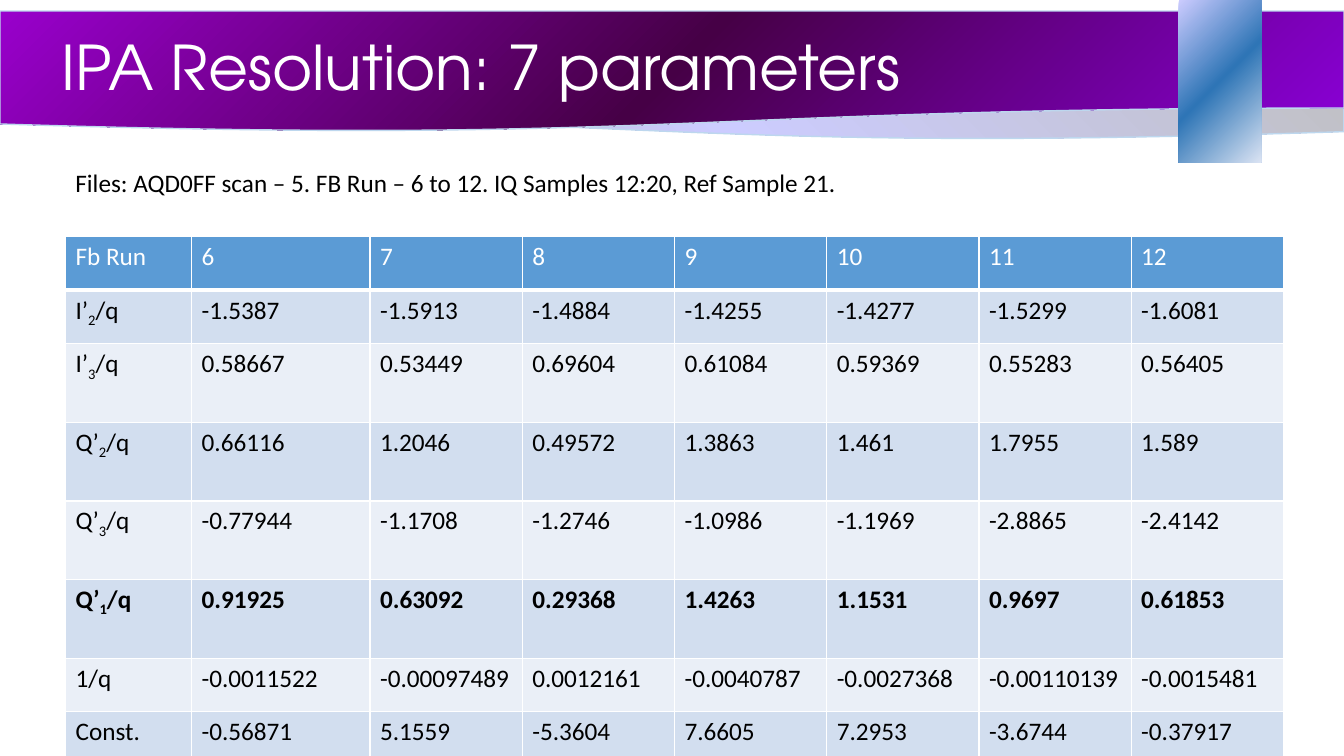
from dataclasses import dataclass

from lxml.etree import SubElement as Sub
from pptx import Presentation
from pptx.dml.color import RGBColor as RGB
from pptx.enum.shapes import MSO_SHAPE as Kind
from pptx.enum.text import MSO_ANCHOR as Anchor, MSO_AUTO_SIZE as Fit, PP_ALIGN as Align
from pptx.oxml.ns import qn
from pptx.shapes.autoshape import Shape
from pptx.slide import Slide
from pptx.table import _Cell as Cell
from pptx.text.text import _Paragraph as Para
from pptx.util import Inches, Pt


@dataclass(frozen=True)
class Theme:
    white: str = "FFFFFF"
    ink: str = "000000"
    edge: str = "BDD7EE"
    head: str = "5B9BD5"
    odd: str = "D2DEEF"
    even: str = "EAEFF7"
    face: str = "TeX Gyre Adventor"
    text: str = "Calibri"
    big: int = 44
    base: int = 18


@dataclass(frozen=True)
class Band:
    kind: Kind
    box: tuple[float, float, float, float]
    stops: tuple[str, str, str]
    flip: bool = False
    line: bool = True
    radial: bool = False


@dataclass(frozen=True)
class Row:
    label: str
    vals: str
    high: float = 0.53
    sub: str = ""
    tail: str = ""
    bold: bool = False


THEME = Theme()
BANDS = [
    Band(Kind.FLOWCHART_DOCUMENT, (0, 0.13, 13.33, 1.26), ("A6A6A6", "CCCCFF", "BFBFBF"), flip=True),
    Band(Kind.FLOWCHART_DOCUMENT, (0, 0.11, 13.33, 1.2), ("8A00D6", "460046", "9900CC")),
    Band(Kind.RECTANGLE, (11.69, 0, 0.82, 1.61), ("DAE3F3", "2E75B6", "CCCCFF"), line=False, radial=True),
]
TALL = 0.78
ROWS = [
    Row("Fb Run", "6 7 8 9 10 11 12"),
    Row("I’", "-1.5387 -1.5913 -1.4884 -1.4255 -1.4277 -1.5299 -1.6081", sub="2", tail="/q"),
    Row("I’", "0.58667 0.53449 0.69604 0.61084 0.59369 0.55283 0.56405", TALL, "3", "/q"),
    Row("Q’", "0.66116 1.2046 0.49572 1.3863 1.461 1.7955 1.589", TALL, "2", "/q"),
    Row("Q’", "-0.77944 -1.1708 -1.2746 -1.0986 -1.1969 -2.8865 -2.4142", TALL, "3", "/q"),
    Row("Q’", "0.91925 0.63092 0.29368 1.4263 1.1531 0.9697 0.61853", TALL, "1", "/q", True),
    Row("1/q", "-0.0011522 -0.00097489 0.0012161 -0.0040787 -0.0027368 -0.00110139 -0.0015481"),
    Row("Const.", "-0.56871 5.1559 -5.3604 7.6605 7.2953 -3.6744 -0.37917"),
]
COLS = [1.25, 1.77] + [1.51] * 6


def add_run(para: Para, text: str, color: str, size: int = THEME.base,
            face: str = THEME.text, bold: bool = False, low: bool = False) -> None:
    run = para.add_run()
    run.text = text
    font = run.font
    font.name, font.size, font.bold = face, Pt(size), bold
    font.color.rgb = RGB.from_string(color)
    if low:
        font._element.set("baseline", "-25000")


def blend(shape: Shape, band: Band) -> None:
    """Fill a shape with three evenly spaced colour stops."""
    shape.fill.gradient()
    grad = shape._element.spPr.find(qn("a:gradFill"))
    for part in list(grad):
        grad.remove(part)
    grad.set("rotWithShape", "1")
    stops = Sub(grad, qn("a:gsLst"))
    for i, color in enumerate(band.stops):
        stop = Sub(stops, qn("a:gs"), pos=str(i * 50000))
        Sub(stop, qn("a:srgbClr"), val=color)
    if band.radial:
        way = Sub(grad, qn("a:path"), {"path": "circle"})
        Sub(way, qn("a:fillToRect"), l="100000", t="100000")
        Sub(grad, qn("a:tileRect"), r="-100000", b="-100000")
    else:
        Sub(grad, qn("a:lin"), ang=str(225 * 60000), scaled="0")


def add_band(slide: Slide, band: Band) -> None:
    shape = slide.shapes.add_shape(band.kind, *map(Inches, band.box))
    shape.shadow.inherit = False
    blend(shape, band)
    if band.line:
        shape.line.color.rgb = RGB.from_string(THEME.edge)
        shape.line.width = Pt(1)
    else:
        shape.line.fill.background()
    if band.flip:
        shape._element.spPr.xfrm.set("flipH", "1")


def style(cell: Cell, fill: str, head: bool) -> None:
    """Draw the cell borders, then its fill."""
    props = cell._tc.get_or_add_tcPr()
    for side in "LRTB" if head else "LRB":
        width = 3 if head and side == "B" else 1
        line = Sub(props, qn(f"a:ln{side}"), w=str(Pt(width)))
        Sub(Sub(line, qn("a:solidFill")), qn("a:srgbClr"), val=THEME.white)
    cell.fill.solid()
    cell.fill.fore_color.rgb = RGB.from_string(fill)


def add_grid(slide: Slide) -> None:
    high = sum(row.high for row in ROWS)
    table = slide.shapes.add_table(
        len(ROWS), len(COLS), Inches(0.65), Inches(2.35), Inches(sum(COLS)), Inches(high)).table
    for col, wide in zip(table.columns, COLS):
        col.width = Inches(wide)
    for r, row in enumerate(ROWS):
        table.rows[r].height = Inches(row.high)
        head = r == 0
        fill = THEME.head if head else THEME.odd if r % 2 else THEME.even
        color = THEME.white if head else THEME.ink
        for c, text in enumerate([row.label, *row.vals.split()]):
            cell = table.cell(r, c)
            style(cell, fill, head)
            para = cell.text_frame.paragraphs[0]
            add_run(para, text, color, bold=row.bold)
            if c == 0 and row.sub:
                add_run(para, row.sub, color, bold=row.bold, low=True)
                add_run(para, row.tail, color, bold=row.bold)


def set_title(slide: Slide) -> None:
    title = slide.shapes.title
    title.left, title.top, title.width, title.height = map(Inches, (0.51, 0.12, 11.5, 1.16))
    slide.shapes._spTree.append(title._element)  # bring in front of the bands
    frame = title.text_frame
    frame.vertical_anchor = Anchor.MIDDLE
    para = frame.paragraphs[0]
    para.alignment, para.line_spacing = Align.LEFT, 0.9
    add_run(para, "IPA Resolution: 7 parameters", THEME.white, THEME.big, THEME.face)


def add_note(slide: Slide) -> None:
    frame = slide.shapes.add_textbox(*map(Inches, (0.65, 1.61, 7.77, 0.4))).text_frame
    frame.word_wrap, frame.auto_size = False, Fit.SHAPE_TO_FIT_TEXT
    add_run(frame.paragraphs[0],
            "Files: AQD0FF scan – 5. FB Run – 6 to 12. IQ Samples 12:20, Ref Sample 21.", THEME.ink)


def main() -> None:
    deck = Presentation()
    deck.slide_width, deck.slide_height = Inches(13.33), Inches(7.5)
    slide = deck.slides.add_slide(deck.slide_layouts.get_by_name("Title Only"))
    for band in BANDS:
        add_band(slide, band)
    add_grid(slide)
    set_title(slide)
    add_note(slide)
    deck.save("out.pptx")


if __name__ == "__main__":
    main()
